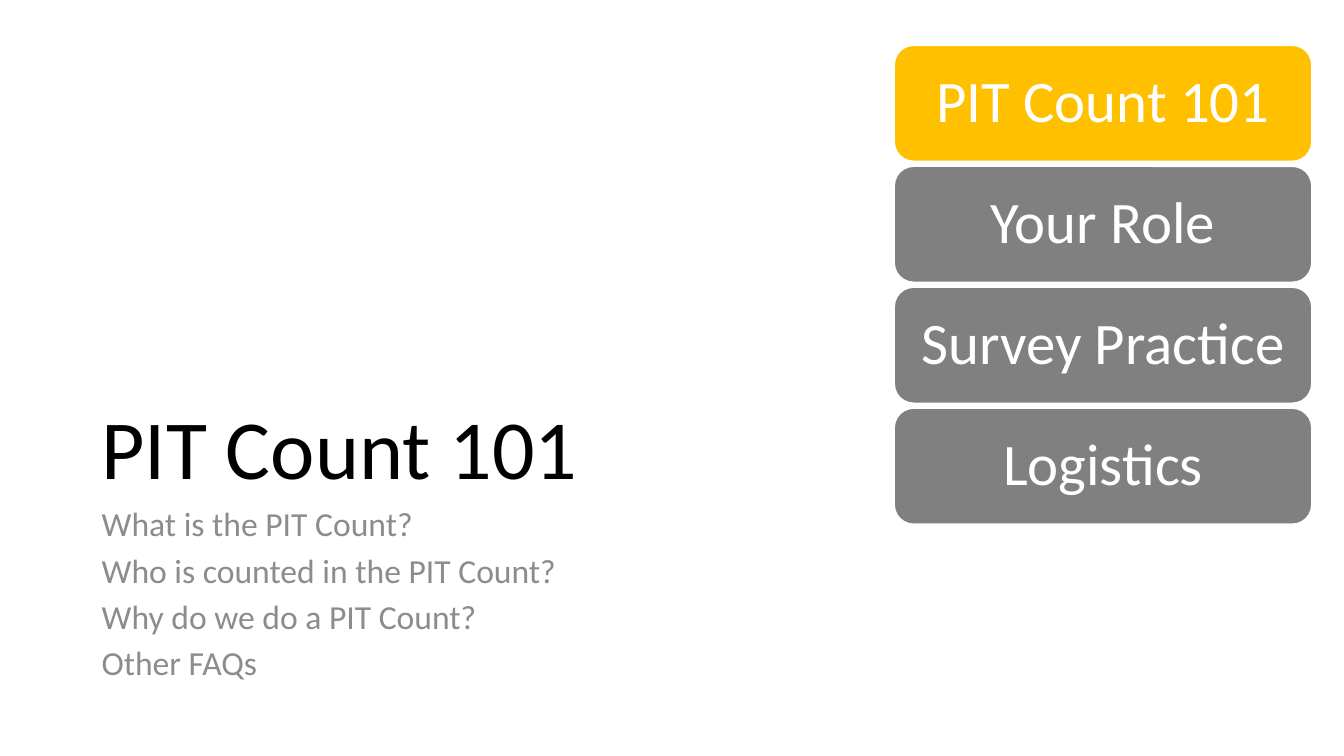
from dataclasses import dataclass

from pptx import Presentation
from pptx.dml.color import RGBColor
from pptx.enum.shapes import MSO_SHAPE
from pptx.enum.text import MSO_ANCHOR, PP_ALIGN
from pptx.slide import Slide
from pptx.text.text import TextFrame
from pptx.util import Inches, Pt


@dataclass(frozen=True)
class Theme:
    font: str = "Calibri"
    title_size: int = 60
    body_size: int = 24
    agenda_size: int = 42
    black: RGBColor = RGBColor(0x00, 0x00, 0x00)
    white: RGBColor = RGBColor(0xFF, 0xFF, 0xFF)
    topic_gray: RGBColor = RGBColor(0x8C, 0x8C, 0x8C)
    active: RGBColor = RGBColor(0xFF, 0xC0, 0x00)
    inactive: RGBColor = RGBColor(0x80, 0x80, 0x80)


@dataclass(frozen=True)
class TextStyle:
    size: int
    color: RGBColor
    line_spacing: float
    space_before: int = 0
    align: PP_ALIGN = PP_ALIGN.LEFT


@dataclass(frozen=True)
class TextBlock:
    text: str
    top: float
    height: float
    anchor: MSO_ANCHOR
    style: TextStyle


@dataclass(frozen=True)
class AgendaItem:
    label: str
    fill: RGBColor


THEME = Theme()
TEXT_LEFT, TEXT_WIDTH = 0.91, 11.5
AGENDA_LEFT, AGENDA_TOP, AGENDA_STEP = 8.87, 0.45, 1.2
AGENDA_WIDTH, AGENDA_HEIGHT = 4.14, 1.15
AGENDA_INSET = 0.2

TOPICS = "\n".join([
    "What is the PIT Count?",
    "Who is counted in the PIT Count?",
    "Why do we do a PIT Count?",
    "Other FAQs",
])
TEXT_BLOCKS = [
    TextBlock("PIT Count 101", 1.87, 3.12, MSO_ANCHOR.BOTTOM,
              TextStyle(THEME.title_size, THEME.black, 0.9)),
    TextBlock(TOPICS, 5.02, 1.91, MSO_ANCHOR.TOP,
              TextStyle(THEME.body_size, THEME.topic_gray, 0.8, space_before=10)),
]
AGENDA_STYLE = TextStyle(THEME.agenda_size, THEME.white, 0.9, align=PP_ALIGN.CENTER)
AGENDA = [
    AgendaItem("PIT Count 101", THEME.active),
    AgendaItem("Your Role", THEME.inactive),
    AgendaItem("Survey Practice", THEME.inactive),
    AgendaItem("Logistics", THEME.inactive),
]


def write_text(frame: TextFrame, text: str, anchor: MSO_ANCHOR, style: TextStyle) -> None:
    frame.text = text
    frame.word_wrap = True
    frame.vertical_anchor = anchor
    for para in frame.paragraphs:
        para.alignment = style.align
        para.line_spacing = style.line_spacing
        para.space_before = Pt(style.space_before)
        for span in para.runs:
            span.font.name = THEME.font
            span.font.size = Pt(style.size)
            span.font.color.rgb = style.color


def add_text_block(page: Slide, block: TextBlock) -> None:
    box = page.shapes.add_textbox(Inches(TEXT_LEFT), Inches(block.top),
                                  Inches(TEXT_WIDTH), Inches(block.height))
    write_text(box.text_frame, block.text, block.anchor, block.style)


def add_agenda_item(page: Slide, item: AgendaItem, top: float) -> None:
    box = page.shapes.add_shape(MSO_SHAPE.ROUNDED_RECTANGLE, Inches(AGENDA_LEFT), Inches(top),
                                Inches(AGENDA_WIDTH), Inches(AGENDA_HEIGHT))
    box.shadow.inherit = False
    box.fill.solid()
    box.fill.fore_color.rgb = item.fill
    box.line.color.rgb = THEME.white
    box.line.width = Pt(1)
    box.text_frame.margin_left = box.text_frame.margin_right = Inches(AGENDA_INSET)
    write_text(box.text_frame, item.label, MSO_ANCHOR.MIDDLE, AGENDA_STYLE)


def main() -> None:
    deck = Presentation()
    deck.slide_width, deck.slide_height = Inches(13.33), Inches(7.5)
    page = deck.slides.add_slide(deck.slide_layouts[6])
    for block in TEXT_BLOCKS:
        add_text_block(page, block)
    for index, item in enumerate(AGENDA):
        add_agenda_item(page, item, AGENDA_TOP + index * AGENDA_STEP)
    deck.save("out.pptx")


if __name__ == "__main__":
    main()
